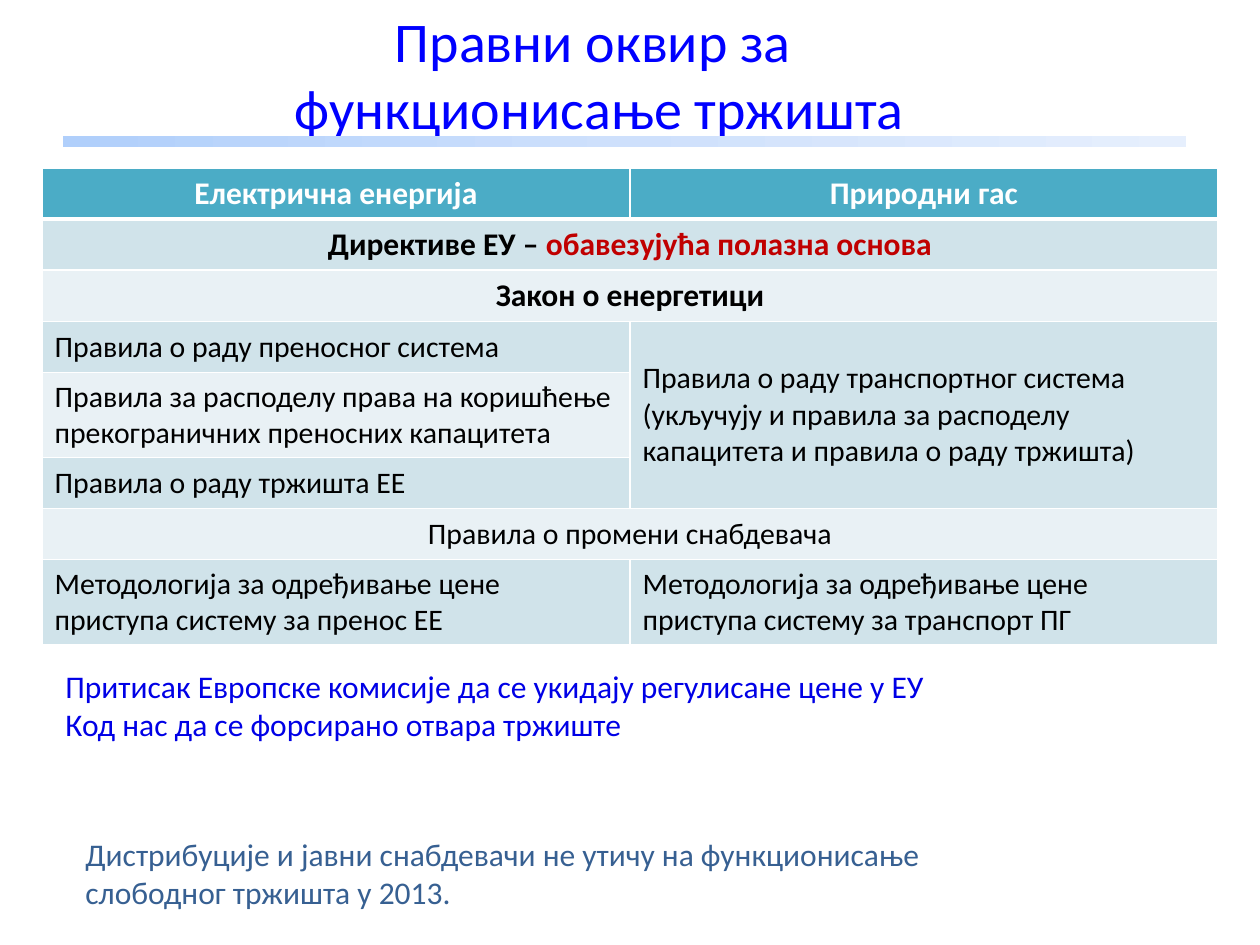
from copy import deepcopy

from lxml.etree import SubElement
from pptx import Presentation
from pptx.dml.color import RGBColor
from pptx.enum.shapes import MSO_SHAPE
from pptx.enum.text import MSO_ANCHOR, MSO_AUTO_SIZE, PP_ALIGN
from pptx.oxml.ns import qn
from pptx.util import Emu, Pt

BLUE = RGBColor(0x00, 0x00, 0xFF)
DEEP_BLUE = RGBColor(0x00, 0x00, 0xE6)
STEEL = RGBColor(0x37, 0x60, 0x92)
WHITE = RGBColor(0xFF, 0xFF, 0xFF)
BLACK = RGBColor(0x00, 0x00, 0x00)
RED = RGBColor(0xC0, 0x00, 0x00)
TEAL = RGBColor(0x4B, 0xAC, 0xC6)
BAND_DARK = RGBColor(0xD0, 0xE3, 0xEA)
BAND_LIGHT = RGBColor(0xE9, 0xF1, 0xF5)
BAR_COLOURS = [RGBColor(0xB0, 0xCF, 0xFB), RGBColor(0xCE, 0xE0, 0xFC), RGBColor(0xE6, 0xEF, 0xFD)]

# Each row holds its height and its texts; one text in a row spans both columns,
# None continues the cell above.
ROWS = [
    (50, ["Електрична енергија", "Природни гас"]),
    (51, ["Директиве ЕУ – "]),
    (51, ["Закон о енергетици"]),
    (51, ["Правила о раду преносног система",
          "Правила о раду транспортног система (укључују и правила за расподелу "
          "капацитета и правила о раду тржишта)"]),
    (85, ["Правила за расподелу права на коришћење прекограничних преносних капацитета", None]),
    (51, ["Правила о раду тржишта ЕЕ", None]),
    (51, ["Правила о промени снабдевача"]),
    (85, ["Методологија за одређивање цене приступа систему за пренос ЕЕ",
          "Методологија за одређивање цене приступа систему за транспорт ПГ"]),
]
BOLD_ROWS = 3


def px(length):
    return Emu(round(length * 914400 / 126))


class SlideBuilder:
    font = "Calibri"

    def __init__(self, presentation):
        self.slide = presentation.slides.add_slide(presentation.slide_layouts[5])

    def style(self, paragraph, size, colour, bold=False, align=PP_ALIGN.LEFT):
        paragraph.alignment = align
        for run in paragraph.runs:
            run.font.name = self.font
            run.font.size = Pt(size)
            run.font.bold = bold
            run.font.color.rgb = colour

    def title(self, text, left, top, width, height):
        heading = self.slide.shapes.title
        heading.left, heading.top = px(left), px(top)
        heading.width, heading.height = px(width), px(height)
        frame = heading.text_frame
        frame.text = text
        frame.auto_size = MSO_AUTO_SIZE.NONE
        frame.vertical_anchor = MSO_ANCHOR.MIDDLE
        self.style(frame.paragraphs[0], 32, BLUE, align=PP_ALIGN.CENTER)

    def gradient_bar(self, left, top, width, height, colours):
        bar = self.slide.shapes.add_shape(
            MSO_SHAPE.RECTANGLE, px(left), px(top), px(width), px(height))
        bar.shadow.inherit = False
        bar.line.fill.background()
        bar.fill.gradient()
        bar.fill.gradient_angle = 0
        stop_list = bar._element.spPr.find(".//" + qn("a:gsLst"))
        stop_list.insert(1, deepcopy(stop_list[0]))
        for index, (stop, colour) in enumerate(zip(bar.fill.gradient_stops, colours)):
            stop.position = index / (len(colours) - 1)
            stop.color.rgb = colour

    def note(self, text, left, top, width, height, colour):
        box = self.slide.shapes.add_textbox(px(left), px(top), px(width), px(height))
        frame = box.text_frame
        frame.text = text
        frame.word_wrap = False
        frame.auto_size = MSO_AUTO_SIZE.SHAPE_TO_FIT_TEXT
        for paragraph in frame.paragraphs:
            self.style(paragraph, 18, colour)

    def cell_look(self, cell, row):
        """Draw white borders, thicker under the header, and the band fill."""
        properties = cell._tc.get_or_add_tcPr()
        thick_side = {0: "lnB", 1: "lnT"}.get(row)
        for side in ("lnL", "lnR", "lnT", "lnB"):
            width = Pt(3 if side == thick_side else 1)
            line = SubElement(properties, qn(f"a:{side}"), w=str(width))
            SubElement(SubElement(line, qn("a:solidFill")), qn("a:srgbClr"), val=str(WHITE))
        cell.fill.solid()
        band = BAND_DARK if row % 2 or row == 5 else BAND_LIGHT
        cell.fill.fore_color.rgb = TEAL if row == 0 else band

    def table(self, rows, left, top, width):
        height = sum(row_height for row_height, _ in rows)
        table = self.slide.shapes.add_table(
            len(rows), 2, px(left), px(top), px(width), px(height)).table
        for row, (row_height, texts) in enumerate(rows):
            table.rows[row].height = px(row_height)
            for column in range(2):
                self.cell_look(table.cell(row, column), row)
            if len(texts) == 1:
                table.cell(row, 0).merge(table.cell(row, 1))
            bold = row < BOLD_ROWS
            centred = row == 0 or len(texts) == 1
            for column, text in enumerate(texts):
                if text is None:
                    continue
                cell = table.cell(row, column)
                cell.text = text
                cell.vertical_anchor = MSO_ANCHOR.TOP if bold else MSO_ANCHOR.MIDDLE
                self.style(cell.text_frame.paragraphs[0], 18 if bold else 17,
                           WHITE if row == 0 else BLACK, bold,
                           PP_ALIGN.CENTER if centred else PP_ALIGN.LEFT)
        return table


def main():
    presentation = Presentation()
    presentation.slide_width, presentation.slide_height = px(1260), px(945)
    builder = SlideBuilder(presentation)

    builder.title("Правни оквир за \vфункционисање тржишта", 63, 21, 1073, 105)
    builder.gradient_bar(63, 136, 1123, 11, BAR_COLOURS)

    legal_table = builder.table(ROWS, 42, 168, 1176)
    legal_table.cell(3, 1).merge(legal_table.cell(5, 1))
    directives = legal_table.cell(1, 0).text_frame.paragraphs[0]
    directives.add_run().text = "обавезујућа полазна основа"
    builder.style(directives, 18, BLACK, True, PP_ALIGN.CENTER)
    directives.runs[1].font.color.rgb = RED

    builder.note("Дистрибуције и јавни снабдевачи не утичу на функционисање\n"
                 "слободног тржишта у 2013.", 73, 829, 877, 89, STEEL)
    builder.note("Притисак Европске комисије да се укидају регулисане цене у ЕУ\n"
                 "Код нас да се форсирано отвара тржиште", 53, 661, 900, 89, DEEP_BLUE)
    presentation.save("out.pptx")


if __name__ == "__main__":
    main()
